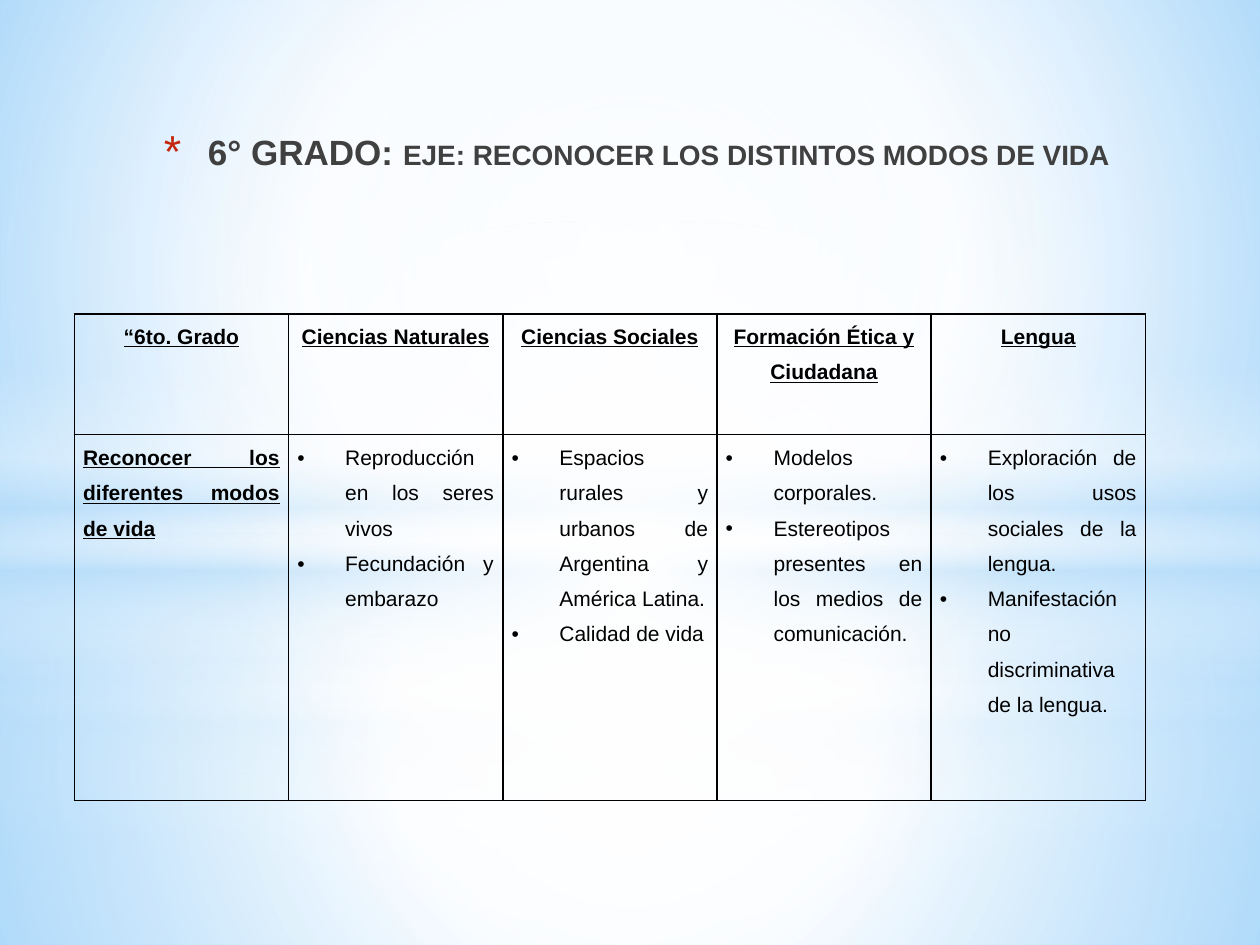
from lxml.etree import SubElement
from pptx import Presentation
from pptx.dml.color import RGBColor
from pptx.enum.shapes import MSO_SHAPE
from pptx.enum.text import MSO_ANCHOR, PP_ALIGN
from pptx.oxml import parse_xml
from pptx.oxml.ns import nsdecls, qn
from pptx.util import Emu, Inches, Pt

COLORS = {"sky": "B4DCFA", "white": "FFFFFF", "ink": "000000", "title": "404040",
          "star": "C3260C", "light_blue": "9ED5FF", "deep_blue": "5BB9FF"}
FONT = "Arial"


class Deck:
    """Holds the style and the current slide; places are percentages of the slide."""

    def __init__(self, width, height):
        self.prs = Presentation()
        self.prs.slide_width, self.prs.slide_height = Inches(width), Inches(height)
        self.slide = self.prs.slides.add_slide(self.prs.slide_layouts[6])

    def place(self, left, top, width, height):
        across, down = self.prs.slide_width / 100, self.prs.slide_height / 100
        return (Emu(round(left * across)), Emu(round(top * down)),
                Emu(round(width * across)), Emu(round(height * down)))

    def gradient(self, fill, owner, stops, center=None):
        """Stops are (position, colour, opacity); without a center it runs downwards."""
        fill.gradient()
        marks = "".join(
            f'<a:gs pos="{pos * 1000}"><a:srgbClr val="{COLORS[color]}">'
            f'<a:alpha val="{opacity * 1000}"/></a:srgbClr></a:gs>'
            for pos, color, opacity in stops)
        if center:
            sides = " ".join(f'{side}="{share * 1000}"' for side, share in zip("ltrb", center))
            course = f'<a:path path="circle"><a:fillToRect {sides}/></a:path>'
        else:
            course = '<a:lin ang="5400000" scaled="0"/>'
        old = next(owner.iter(qn("a:gradFill")))
        old.getparent().replace(old, parse_xml(
            f'<a:gradFill {nsdecls("a")} rotWithShape="1"><a:gsLst>{marks}</a:gsLst>'
            f'{course}</a:gradFill>'))

    def background(self, stops, center):
        self.gradient(self.slide.background.fill, self.slide.element, stops, center)

    def glow(self, kind, box, stops, center=None):
        shape = self.slide.shapes.add_shape(kind, *self.place(*box))
        shape.shadow.inherit = False
        shape.line.fill.background()
        self.gradient(shape.fill, shape.element, stops, center)

    def add_text(self, paragraph, text, size, color="ink", bold=False, underline=False):
        run = paragraph.add_run()
        run.text = text
        font = run.font
        font.name, font.size, font.bold, font.underline = FONT, Pt(size), bold, underline
        font.color.rgb = RGBColor.from_string(COLORS[color])

    def bullet(self, paragraph, mark, indent, color="ink", percent=100):
        props = paragraph._p.get_or_add_pPr()
        props.set("marL", str(Inches(indent)))
        props.set("indent", str(-Inches(indent)))
        SubElement(SubElement(props, qn("a:buClr")), qn("a:srgbClr")).set("val", COLORS[color])
        SubElement(props, qn("a:buSzPct")).set("val", str(percent * 1000))
        SubElement(props, qn("a:buFont")).set("typeface", FONT)
        SubElement(props, qn("a:buChar")).set("char", mark)

    def title(self, box, parts):
        frame = self.slide.shapes.add_textbox(*self.place(*box)).text_frame
        frame.word_wrap = True
        frame.vertical_anchor = MSO_ANCHOR.BOTTOM
        heading = frame.paragraphs[0]
        heading.alignment = PP_ALIGN.RIGHT
        self.bullet(heading, "*", 0.35, "star", 128)
        for text, size in parts:
            self.add_text(heading, text, size, "title", bold=True)

    def border(self, cell):
        props = cell._tc.get_or_add_tcPr()
        for order, side in enumerate(("lnL", "lnR", "lnT", "lnB")):
            props.insert(order, parse_xml(
                f'<a:{side} {nsdecls("a")} w="{Pt(1)}"><a:solidFill>'
                f'<a:srgbClr val="{COLORS["ink"]}"/></a:solidFill></a:{side}>'))

    def fill_cell(self, cell, lines, margin, align, strong, bulleted):
        cell.fill.background()
        self.border(cell)
        cell.margin_left = cell.margin_right = Inches(margin)
        cell.margin_top = cell.margin_bottom = 0
        frame = cell.text_frame
        for index, line in enumerate(lines):
            paragraph = frame.add_paragraph() if index else frame.paragraphs[0]
            paragraph.alignment, paragraph.line_spacing = align, 1.5
            if bulleted:
                self.bullet(paragraph, "•", 0.38)
            self.add_text(paragraph, line, 12, bold=strong, underline=strong)

    def table(self, box, heads, topic, contents, head_height):
        table = self.slide.shapes.add_table(2, len(heads), *self.place(*box)).table
        table.first_row = table.horz_banding = False
        total = self.place(*box)[3]
        table.rows[0].height = Inches(head_height)
        table.rows[1].height = total - Inches(head_height)
        for column, head in enumerate(heads):
            self.fill_cell(table.cell(0, column), [head], 0.05, PP_ALIGN.CENTER, True, False)
        self.fill_cell(table.cell(1, 0), [topic], 0.07, PP_ALIGN.JUSTIFY, True, False)
        for column, lines in enumerate(contents, start=1):
            self.fill_cell(table.cell(1, column), lines, 0.07, PP_ALIGN.JUSTIFY, False, True)


MIDDLE = (50, 50, 50, 50)
BAND = [(0, "white", 0), (29, "white", 30), (45, "sky", 40),
        (55, "white", 26), (65, "sky", 60), (100, "white", 0)]


def light_layer(deck, horizon, band_top, extra, halo_stop):
    """Lower and upper glow meeting at the horizon, a light band and a white halo."""
    lower = [(0, "white", 91 + extra), (37, "white", 76 + extra), (100, "sky", 79 + extra)]
    upper = [(0, "white", 89 + extra), (48, "white", 62 + extra), (100, "sky", 79 + extra)]
    halo = [(0, "white", 100), (halo_stop, "white", 0)]
    deck.glow(MSO_SHAPE.RECTANGLE, (0, horizon, 100, 100 - horizon), lower, MIDDLE)
    deck.glow(MSO_SHAPE.RECTANGLE, (0, 0, 100, horizon), upper, MIDDLE)
    deck.glow(MSO_SHAPE.RECTANGLE, (0, band_top, 100, 33.33), BAND)
    deck.glow(MSO_SHAPE.OVAL, (0, 23.33, 100, 74.4), halo, MIDDLE)


def main():
    deck = Deck(10, 7.5)

    # Backdrop
    deck.background([(0, "light_blue", 100), (60, "white", 100), (100, "deep_blue", 100)],
                    (20, 10, 20, 60))
    light_layer(deck, horizon=74.4, band_top=54.9, extra=0, halo_stop=56)
    light_layer(deck, horizon=56.4, band_top=38.7, extra=1, halo_stop=54)

    # Title
    deck.title((7.5, 6.93, 81.6, 12),
               [("6° GRADO: ", 20), ("EJE: RECONOCER LOS DISTINTOS MODOS DE VIDA", 16)])

    # Subjects and their contents
    subjects = {
        "Ciencias Naturales": ["Reproducción en los seres vivos", "Fecundación y embarazo"],
        "Ciencias Sociales": ["Espacios rurales y urbanos de Argentina y América Latina.",
                              "Calidad de vida"],
        "Formación Ética y Ciudadana": ["Modelos corporales.",
                                        "Estereotipos presentes en los medios de comunicación."],
        "Lengua": ["Exploración de los usos sociales de la lengua.",
                   "Manifestación no discriminativa de la lengua."],
    }
    deck.table((5.9, 33.2, 85, 51.5), ["“6to. Grado", *subjects],
               "Reconocer los diferentes modos de vida", subjects.values(), head_height=0.96)

    deck.prs.save("out.pptx")


if __name__ == "__main__":
    main()
